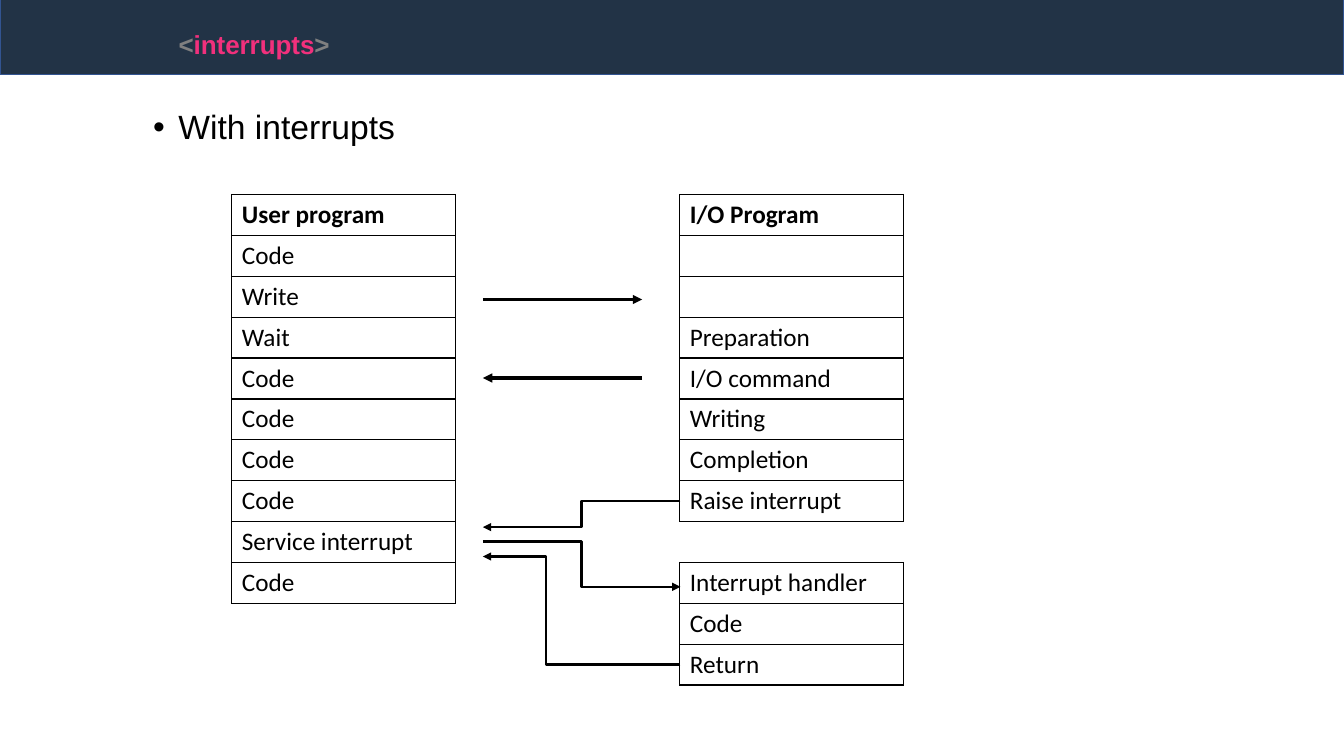
from dataclasses import dataclass

from lxml import etree
from pptx import Presentation
from pptx.dml.color import RGBColor
from pptx.enum.shapes import MSO_CONNECTOR as Conn, MSO_SHAPE as Shape
from pptx.enum.text import MSO_ANCHOR as Anchor, MSO_AUTO_SIZE as AutoSize, PP_ALIGN as Align
from pptx.oxml.ns import qn
from pptx.util import Inches, Pt


@dataclass(frozen=True)
class Theme:
    band: str = "223346"
    band_edge: str = "325491"
    ink: str = "000000"
    bracket: str = "808080"
    accent: str = "F1307C"
    heading_font: str = "Arial"
    table_font: str = "Calibri"
    title_size: float = 32
    body_size: float = 24
    cell_size: float = 18


class SlideBuilder:
    """Places elements on a grid whose row is as high as a table row."""

    COLS, ROWS = 60, 18.5

    def __init__(self, prs, theme):
        self.theme = theme
        self.width, self.height = prs.slide_width, prs.slide_height
        self.s = prs.slides.add_slide(prs.slide_layouts[1])

    def x(self, cols):
        return round(self.width * cols / self.COLS)

    def y(self, rows):
        return round(self.height * rows / self.ROWS)

    def place(self, sp, left, top, width, height):
        sp.left, sp.top = self.x(left), self.y(top)
        sp.width, sp.height = self.x(width), self.y(height)

    def style(self, r, font, size, color, bold=False):
        r.font.name, r.font.size, r.font.bold = font, Pt(size), bold
        r.font.color.rgb = RGBColor.from_string(color)

    def band(self, top, height):
        sp = self.s.shapes.add_shape(Shape.RECTANGLE, 0, self.y(top), self.width, self.y(height))
        sp.shadow.inherit = False
        sp.fill.solid()
        sp.fill.fore_color.rgb = RGBColor.from_string(self.theme.band)
        sp.line.color.rgb = RGBColor.from_string(self.theme.band_edge)
        sp.line.width = Pt(1)
        self.s.shapes._spTree.insert(2, sp._element)  # behind the placeholders

    def title(self, word, *box):
        t, sp = self.theme, self.s.shapes.title
        self.place(sp, *box)
        tf = sp.text_frame
        tf.word_wrap, tf.auto_size = False, AutoSize.SHAPE_TO_FIT_TEXT
        tf.vertical_anchor = Anchor.TOP
        p = tf.paragraphs[0]
        p.alignment = Align.LEFT
        for text, color in (("<", t.bracket), (word, t.accent), (">", t.bracket)):
            r = p.add_run()
            r.text = text
            self.style(r, t.heading_font, t.title_size, color, True)
            r.font._element.set("baseline", "30000")

    def bullets(self, items, *box):
        sp = self.s.placeholders[1]
        self.place(sp, *box)
        tf = sp.text_frame
        tf.auto_size = AutoSize.NONE
        tf.text = "\n".join(items)
        for i, p in enumerate(tf.paragraphs):
            p.level, p.line_spacing = 1, 0.9
            p.space_before = Pt(5 if i else 0)
            pPr = p._p.get_or_add_pPr()
            pPr.set("marL", str(Inches(0.75)))
            pPr.set("indent", str(Inches(-0.25)))
            etree.SubElement(pPr, qn("a:buFont"), typeface="Arial")
            etree.SubElement(pPr, qn("a:buChar"), char="•")
            self.style(p.runs[0], self.theme.heading_font, self.theme.body_size, self.theme.ink)

    def border(self, tcPr, side, visible):
        ln = etree.SubElement(tcPr, qn(f"a:ln{side}"), w=str(Pt(1)))
        if visible:
            fill = etree.SubElement(ln, qn("a:solidFill"))
            etree.SubElement(fill, qn("a:srgbClr"), val=self.theme.ink)
        else:
            etree.SubElement(ln, qn("a:noFill"))

    def table(self, columns, left, top, col_width):
        """Each column lists its cells; None is an unframed gap."""
        t, n_rows, n_cols = self.theme, max(map(len, columns)), len(columns)
        framed = {(i, j) for j, col in enumerate(columns)
                  for i, text in enumerate(col) if text is not None}
        tbl = self.s.shapes.add_table(n_rows, n_cols, self.x(left), self.y(top),
                                      self.x(col_width * n_cols), self.y(n_rows)).table
        tbl.first_row = tbl.horz_banding = False
        for i in range(n_rows):
            tbl.rows[i].height = self.y(1)
            for j in range(n_cols):
                cell = tbl.cell(i, j)
                tcPr = cell._tc.get_or_add_tcPr()
                neighbours = {"L": (i, j - 1), "R": (i, j + 1), "T": (i - 1, j), "B": (i + 1, j)}
                for side, other in neighbours.items():
                    self.border(tcPr, side, (i, j) in framed or other in framed)
                cell.fill.background()
                if (i, j) in framed and columns[j][i]:
                    cell.text = columns[j][i]
                    r = cell.text_frame.paragraphs[0].runs[0]
                    self.style(r, t.table_font, t.cell_size, t.ink, i == 0)

    def arrow(self, start, end, width, kind=Conn.STRAIGHT, bend=None):
        cn = self.s.shapes.add_connector(kind, self.x(start[0]), self.y(start[1]),
                                         self.x(end[0]), self.y(end[1]))
        cn.line.color.rgb = RGBColor.from_string(self.theme.ink)
        cn.line.width = Pt(width)
        etree.SubElement(cn.line._get_or_add_ln(), qn("a:tailEnd"), type="triangle")
        spPr = cn._element.spPr
        etree.SubElement(spPr, qn("a:effectLst"))
        if bend is not None:
            guides = spPr.find(qn("a:prstGeom")).get_or_add_avLst()
            etree.SubElement(guides, qn("a:gd"), name="adj1", fmla=f"val {round(bend * 100000)}")


def main():
    prs = Presentation()
    prs.slide_width, prs.slide_height = Inches(13.33), Inches(7.5)
    b = SlideBuilder(prs, Theme())

    # Header and bullet
    b.band(-0.09, 1.92)
    b.title("interrupts", 7.52, 0.44, 7.83, 1.58)
    b.bullets(["With interrupts"], 4.14, 2.59, 52.47, 14.21)

    # Program flow table
    user = ["User program", "Code", "Write", "Wait", "Code", "Code", "Code", "Code",
            "Service interrupt", "Code"]
    io = ["I/O Program", "", "", "Preparation", "I/O command", "Writing", "Completion",
          "Raise interrupt", None, "Interrupt handler", "Code", "Return"]
    b.table([user, [], io], 10.35, 4.76, 10)

    # Write request and the return to user code
    user_x, io_x, io_edge = 21.56, 28.67, 30.38
    b.arrow((user_x, 7.33), (io_x, 7.33), 2.25)
    b.arrow((io_x, 9.25), (user_x, 9.25), 2.25)

    # Interrupt handling: call, return, raise
    for start, end, bend in (
        ((user_x, 13.25), (io_edge, 14.36), 0.5),
        ((io_edge, 16.26), (user_x, 13.62), 0.68),
        ((io_edge, 12.26), (user_x, 12.9), 0.5),
    ):
        b.arrow(start, end, 1.75, Conn.ELBOW, bend)

    prs.save("out.pptx")


if __name__ == "__main__":
    main()
